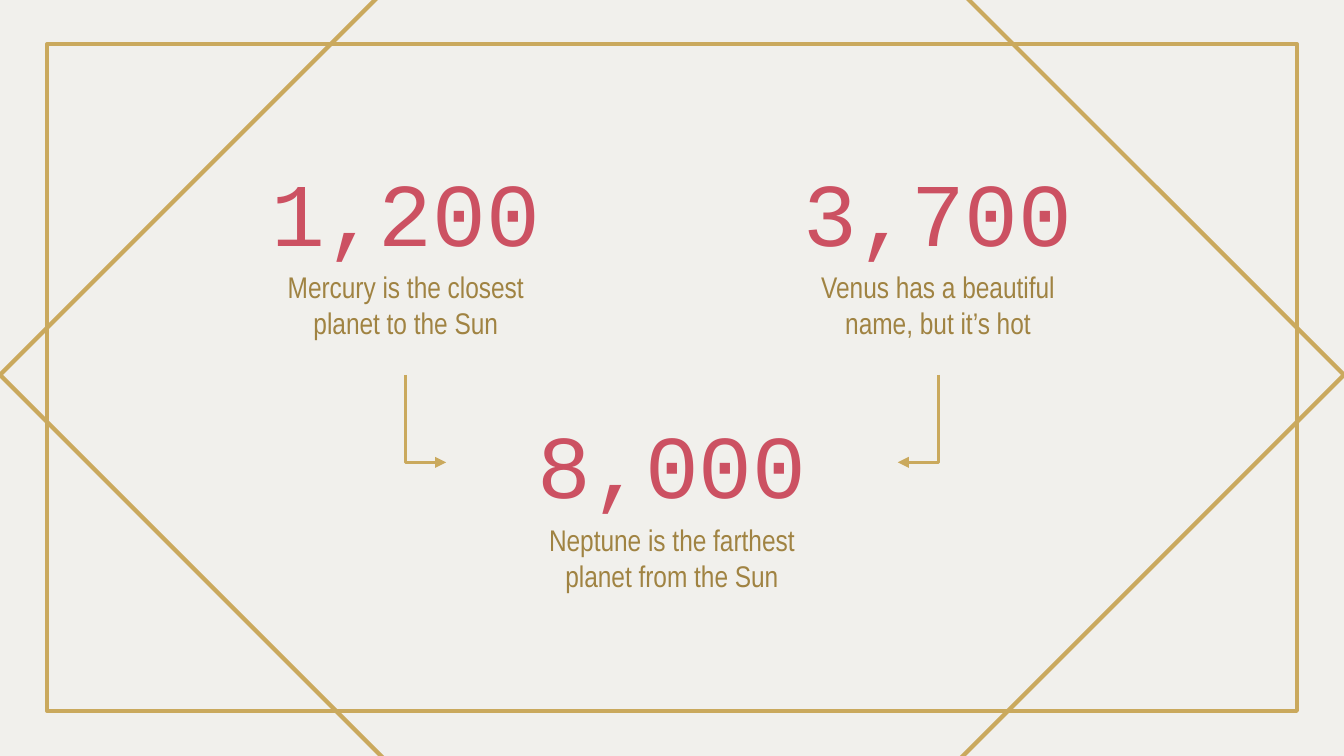
from lxml import etree
from pptx import Presentation
from pptx.dml.color import RGBColor
from pptx.enum.shapes import MSO_CONNECTOR, MSO_SHAPE
from pptx.enum.text import MSO_ANCHOR, PP_ALIGN
from pptx.oxml.ns import qn
from pptx.util import Inches, Pt

RECT = MSO_SHAPE.RECTANGLE
ELBOW = MSO_CONNECTOR.ELBOW
CENTER = PP_ALIGN.CENTER
TOP, MIDDLE = MSO_ANCHOR.TOP, MSO_ANCHOR.MIDDLE

COLORS = {"paper": "F1F0EC", "gold": "CAA95D", "number": "CC5162", "caption": "A08342"}
NUMBER = {"size": Pt(48), "name": "Courier New"}
CAPTION = {"size": Pt(16), "name": "Arial Narrow"}
SLIDE_W = 10
SLIDE_H = SLIDE_W * 9 / 16

# Centre x, top y, number, caption
FACTS = [
    (3.02, 1.12, "1,200", "Mercury is the closest planet to the Sun"),
    (6.98, 1.12, "3,700", "Venus has a beautiful name, but it’s hot"),
    (5, 3, "8,000", "Neptune is the farthest planet from the Sun"),
]


def rgb(key):
    return RGBColor.from_string(COLORS[key])


def set_line(sp, width):
    sp.line.color.rgb = rgb("gold")
    sp.line.width = Pt(width)


def add_frame(slide):
    sp = slide.shapes.add_shape(RECT, Inches(0.35), Inches(0.33), Inches(9.3), Inches(4.96))
    sp.shadow.inherit = False
    sp.fill.solid()
    sp.fill.fore_color.rgb = rgb("paper")
    set_line(sp, 2.25)


def add_chevron(slide, points):
    start, *rest = [(Inches(x), Inches(y)) for x, y in points]
    builder = slide.shapes.build_freeform(*start)
    builder.add_line_segments(rest, close=False)
    sp = builder.convert_to_shape()
    sp.shadow.inherit = False
    sp.fill.background()
    set_line(sp, 2.25)


def add_text(slide, text, center, top, width, anchor, color, font):
    sp = slide.shapes.add_textbox(
        Inches(center - width / 2), Inches(top), Inches(width), Inches(0.89))
    tf = sp.text_frame
    frame_format = {"word_wrap": True, "vertical_anchor": anchor}
    for side in ("left", "right", "top", "bottom"):
        frame_format[f"margin_{side}"] = Inches(0.1)
    for name, value in frame_format.items():
        setattr(tf, name, value)
    p = tf.paragraphs[0]
    p.alignment = CENTER
    r = p.add_run()
    r.text = text
    r.font.color.rgb = rgb(color)
    for name, value in font.items():
        setattr(r.font, name, value)


def add_fact(slide, center, top, number, caption):
    add_text(slide, number, center, top, 3.36, MIDDLE, "number", NUMBER)
    add_text(slide, caption, center, top + 0.78, 2.23, TOP, "caption", CAPTION)


def add_bent_arrow(slide, x, y, run, drop):
    """Go down by drop from (x, y), then sideways by run (negative is left)."""
    # The preset bends right then down, so it is turned about its centre
    mid_x, mid_y = x + run / 2, y + drop / 2
    left, right = mid_x - drop / 2, mid_x + drop / 2
    if run > 0:
        left, right = right, left
    half = abs(run) / 2
    cxn = slide.shapes.add_connector(
        ELBOW, Inches(left), Inches(mid_y - half), Inches(right), Inches(mid_y + half))
    set_line(cxn, 1.5)
    sp_pr = cxn._element.spPr
    sp_pr.find(qn("a:xfrm")).set("rot", str((270 if run > 0 else 90) * 60000))
    sp_pr.find(qn("a:prstGeom")).set("prst", "bentConnector2")
    etree.SubElement(sp_pr.find(qn("a:ln")), qn("a:tailEnd"), type="triangle")
    etree.SubElement(sp_pr, qn("a:effectLst"))


def main():
    prs = Presentation()
    prs.slide_width, prs.slide_height = Inches(SLIDE_W), Inches(SLIDE_H)
    slide = prs.slides.add_slide(prs.slide_layouts[6])
    slide.background.fill.solid()
    slide.background.fill.fore_color.rgb = rgb("paper")

    # Frame and mirrored chevrons
    add_frame(slide)
    chevron = [(4.14, -1.35), (0, 2.79), (4.18, 6.97)]
    add_chevron(slide, chevron)
    add_chevron(slide, [(SLIDE_W - x, y) for x, y in chevron])

    # Numbers with captions
    for fact in FACTS:
        add_fact(slide, *fact)

    # Arrows from the upper facts to the lower one
    add_bent_arrow(slide, 3.02, 2.79, 0.3, 0.65)
    add_bent_arrow(slide, 6.98, 2.79, -0.3, 0.65)

    prs.save("out.pptx")


if __name__ == "__main__":
    main()
